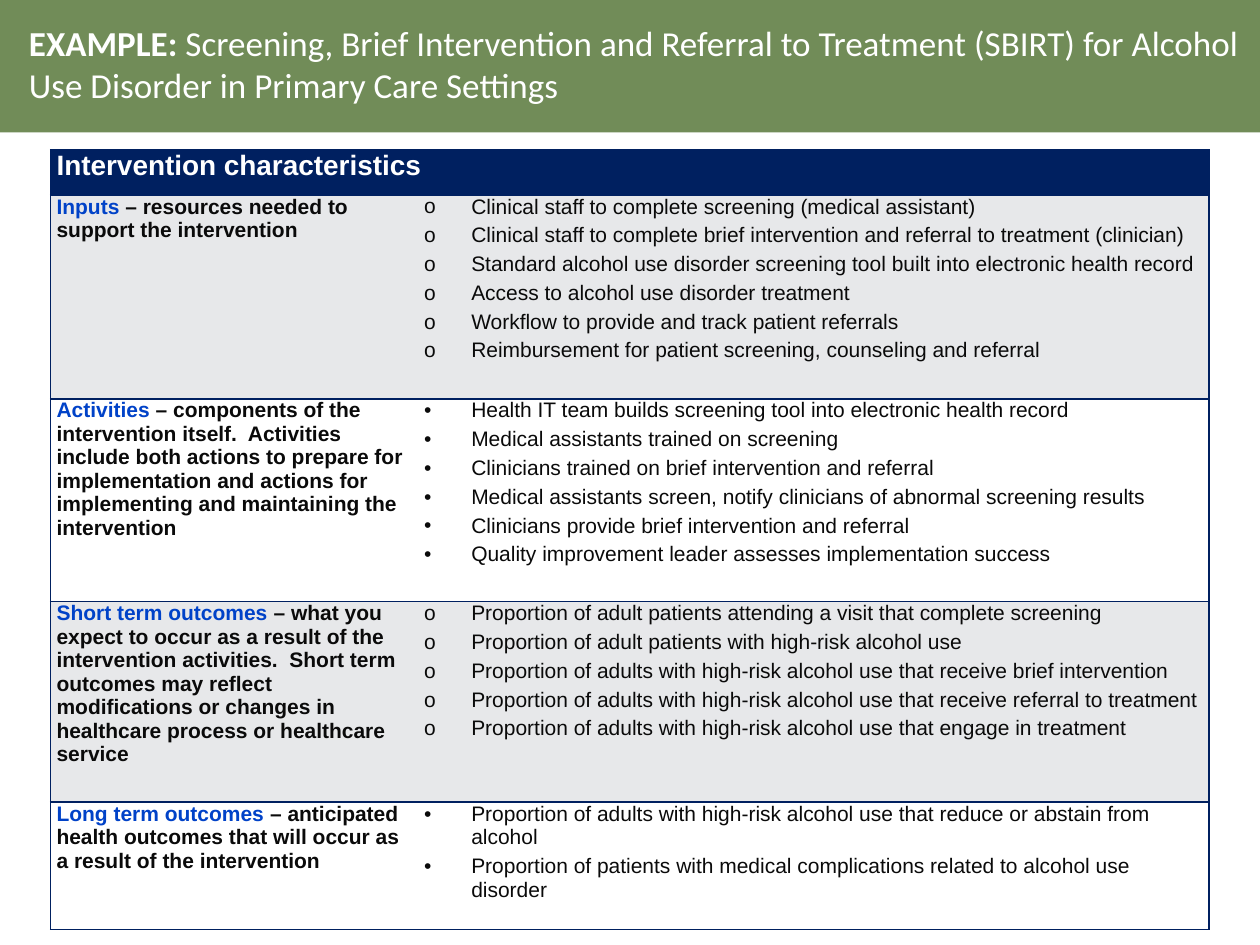
import pptx
import pptx.dml.color
import pptx.enum.text
import pptx.oxml
import pptx.oxml.ns
import pptx.util
from pptx.util import Cm

RGBColor = pptx.dml.color.RGBColor
GREEN = RGBColor(0x71, 0x8C, 0x58)
NAVY = RGBColor(0x00, 0x20, 0x60)
BLUE = RGBColor(0x00, 0x42, 0xC8)
INK = RGBColor(0x0A, 0x0A, 0x0A)
GRAY = RGBColor(0xE7, 0xE8, 0xEA)
WHITE = RGBColor(0xFF, 0xFF, 0xFF)

TITLE = (
    "EXAMPLE: ",
    "Screening, Brief Intervention and Referral to Treatment (SBIRT) for Alcohol "
    "Use Disorder in Primary Care Settings",
)
HEADER = "Intervention characteristics"
COLUMN_WIDTHS = (7.41, 15.94)
ROW_HEIGHTS = (0.91, 4.11, 4.09, 4.04, 2.57)
SECTIONS = [
    ("Inputs", " – resources needed to support the intervention", [
        "Clinical staff to complete screening (medical assistant)",
        "Clinical staff to complete brief intervention and referral to treatment (clinician)",
        "Standard alcohol use disorder screening tool built into electronic health record",
        "Access to alcohol use disorder treatment",
        "Workflow to provide and track patient referrals",
        "Reimbursement for patient screening, counseling and referral",
    ]),
    ("Activities", " – components of the intervention itself.  Activities include both "
     "actions to prepare for implementation and actions for implementing and "
     "maintaining the intervention", [
        "Health IT team builds screening tool into electronic health record",
        "Medical assistants trained on screening",
        "Clinicians trained on brief intervention and referral",
        "Medical assistants screen, notify clinicians of abnormal screening results",
        "Clinicians provide brief intervention and referral",
        "Quality improvement leader assesses implementation success",
     ]),
    ("Short term outcomes", " – what you expect to occur as a result of the intervention "
     "activities.  Short term outcomes may reflect modifications or changes in "
     "healthcare process or healthcare service", [
        "Proportion of adult patients attending a visit that complete screening",
        "Proportion of adult patients with high-risk alcohol use",
        "Proportion of adults with high-risk alcohol use that receive brief intervention",
        "Proportion of adults with high-risk alcohol use that receive referral to treatment",
        "Proportion of adults with high-risk alcohol use that engage in treatment",
     ]),
    ("Long term outcomes", " – anticipated health outcomes that will occur as a result "
     "of the intervention", [
        "Proportion of adults with high-risk alcohol use that reduce or abstain from alcohol",
        "Proportion of patients with medical complications related to alcohol use disorder",
     ]),
]


class SlideBuilder:
    title_font = "Calibri"
    table_font = "Arial"
    title_size = 20
    header_size = 16
    body_size = 12

    def __init__(self, slide):
        self.slide = slide

    def add_run(self, paragraph, text, font, size, color, bold=False):
        run = paragraph.add_run()
        run.text = text
        run.font.name = font
        run.font.size = pptx.util.Pt(size)
        run.font.color.rgb = color
        run.font.bold = bold

    def add_title(self, lead, rest):
        title = self.slide.shapes.title
        title.left, title.top, title.width, title.height = Cm(0), Cm(-0.1), Cm(25.4), Cm(2.77)
        title.fill.solid()
        title.fill.fore_color.rgb = GREEN
        frame = title.text_frame
        frame.word_wrap = True
        frame.auto_size = pptx.enum.text.MSO_AUTO_SIZE.NONE
        frame.vertical_anchor = pptx.enum.text.MSO_ANCHOR.MIDDLE
        paragraph = frame.paragraphs[0]
        paragraph.alignment = pptx.enum.text.PP_ALIGN.LEFT
        paragraph._p.get_or_add_pPr().set("marL", str(Cm(0.33)))
        self.add_run(paragraph, lead, self.title_font, self.title_size, WHITE, True)
        self.add_run(paragraph, rest, self.title_font, self.title_size, WHITE)

    def add_table(self, left, top, column_widths, row_heights):
        table = self.slide.shapes.add_table(
            len(row_heights), len(column_widths), Cm(left), Cm(top),
            Cm(sum(column_widths)), Cm(sum(row_heights))).table
        table.first_row = False
        table.horz_banding = False
        for column, width in zip(table.columns, column_widths):
            column.width = Cm(width)
        for row, height in zip(table.rows, row_heights):
            row.height = Cm(height)
        return table

    def style_cell(self, cell, fill, sides):
        cell.margin_left = cell.margin_right = Cm(0.12)
        cell.margin_top = cell.margin_bottom = 0
        properties = cell._tc.get_or_add_tcPr()
        for side in "LRTB":
            line = pptx.oxml.parse_xml(
                f'<a:ln{side} {pptx.oxml.ns.nsdecls("a")} w="12700">'
                + (f'<a:solidFill><a:srgbClr val="{NAVY}"/></a:solidFill>'
                   if side in sides else "<a:noFill/>")
                + f"</a:ln{side}>")
            properties.append(line)
        cell.fill.solid()
        cell.fill.fore_color.rgb = fill

    def add_header(self, table, text):
        for cell in table.rows[0].cells:
            self.style_cell(cell, NAVY, "LRTB")
        header = table.cell(0, 0)
        header.merge(table.cell(0, len(table.columns) - 1))
        self.add_run(header.text_frame.paragraphs[0], text,
                     self.table_font, self.header_size, WHITE, True)

    def add_description(self, cell, term, meaning):
        paragraph = cell.text_frame.paragraphs[0]
        self.add_run(paragraph, term, self.table_font, self.body_size, BLUE, True)
        self.add_run(paragraph, meaning, self.table_font, self.body_size, INK, True)

    def add_bullets(self, cell, items, mark):
        frame = cell.text_frame
        for index, item in enumerate(items):
            paragraph = frame.add_paragraph() if index else frame.paragraphs[0]
            paragraph.space_after = pptx.util.Pt(3)
            properties = paragraph._p.get_or_add_pPr()
            properties.set("marL", str(Cm(0.95)))
            properties.set("indent", str(-Cm(0.95)))
            properties.append(pptx.oxml.parse_xml(
                f'<a:buFont {pptx.oxml.ns.nsdecls("a")} typeface="{self.table_font}"/>'))
            properties.append(pptx.oxml.parse_xml(
                f'<a:buChar {pptx.oxml.ns.nsdecls("a")} char="{mark}"/>'))
            self.add_run(paragraph, item, self.table_font, self.body_size, INK)


def main():
    presentation = pptx.Presentation()
    presentation.slide_width = Cm(25.4)
    presentation.slide_height = Cm(19.05)
    builder = SlideBuilder(presentation.slides.add_slide(presentation.slide_layouts[5]))
    builder.add_title(*TITLE)
    table = builder.add_table(1.02, 3.02, COLUMN_WIDTHS, ROW_HEIGHTS)
    builder.add_header(table, HEADER)
    for row, (term, meaning, items) in enumerate(SECTIONS, start=1):
        fill, mark = (GRAY, "o") if row % 2 else (WHITE, "•")
        description, details = table.rows[row].cells
        builder.style_cell(description, fill, "LTB")
        builder.style_cell(details, fill, "RTB")
        builder.add_description(description, term, meaning)
        builder.add_bullets(details, items, mark)
    presentation.save("out.pptx")


if __name__ == "__main__":
    main()
